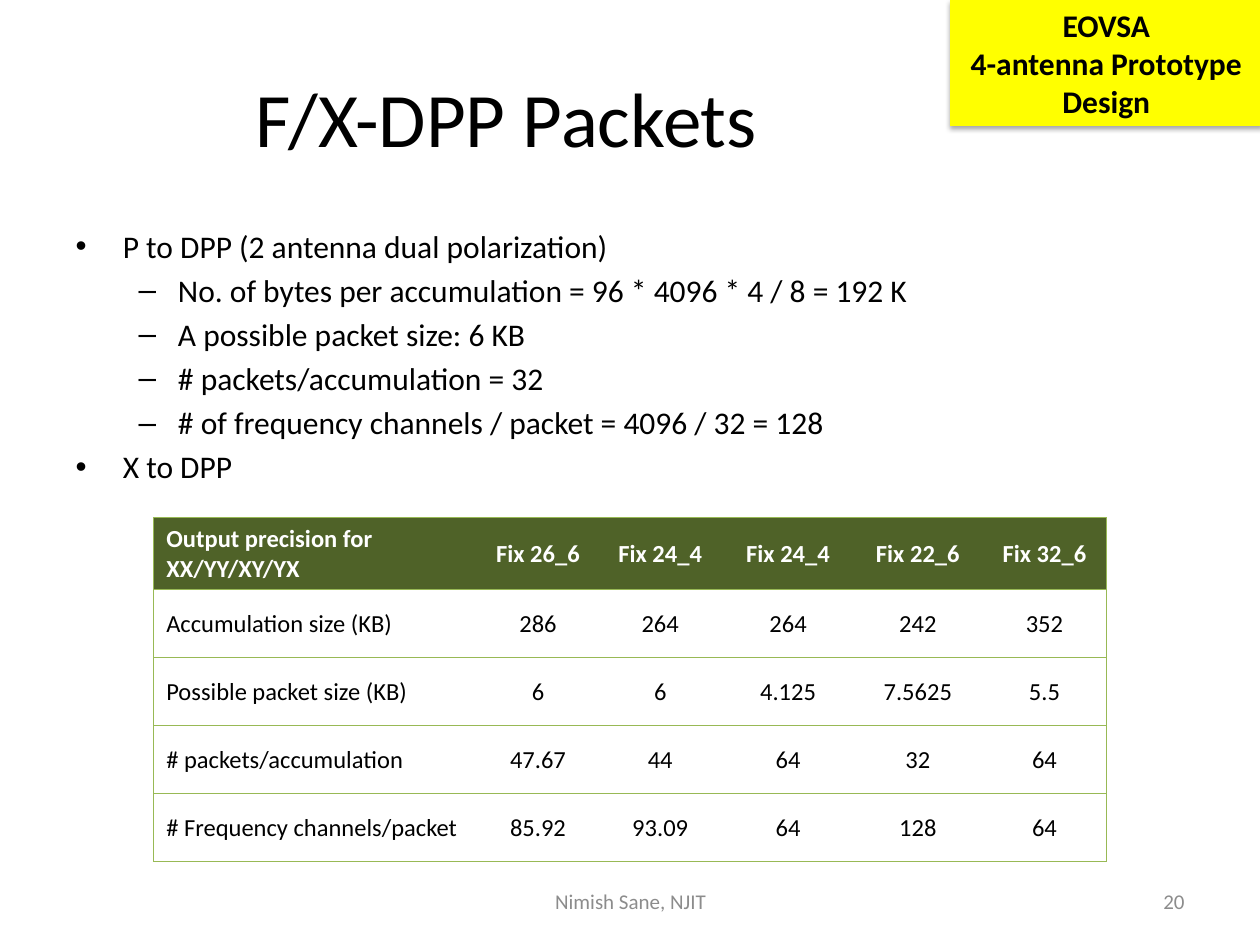
import pptx
import pptx.dml.color
import pptx.enum.shapes
import pptx.enum.text
import pptx.oxml
import pptx.oxml.ns
import pptx.util
import lxml.etree

Inches = pptx.util.Inches
Pt = pptx.util.Pt
Align = pptx.enum.text.PP_ALIGN
Anchor = pptx.enum.text.MSO_ANCHOR

COLORS = {
    "text": "000000",
    "muted": "8C8C8C",
    "white": "FFFFFF",
    "badge": "FFFF00",
    "header": "4F6228",
    "border": "98B955",
}


def rgb(name):
    return pptx.dml.color.RGBColor.from_string(COLORS[name])


def format_text(text_frame, size, color, alignment=None, bold=False):
    text_frame.word_wrap = True
    font_format = {"name": "Calibri", "size": Pt(size), "bold": bold}
    for paragraph in text_frame.paragraphs:
        paragraph.alignment = alignment
        for run in paragraph.runs:
            for attribute, value in font_format.items():
                setattr(run.font, attribute, value)
            run.font.color.rgb = rgb(color)


presentation = pptx.Presentation()
presentation.slide_width = Inches(10)
presentation.slide_height = Inches(7.5)
slide = presentation.slides.add_slide(presentation.slide_layouts[1])
title, body = slide.placeholders

title_position = {"left": 0.5, "top": 0.3, "width": 7.04, "height": 1.25}
body_position = {"left": 0.5, "top": 1.75, "width": 9, "height": 2.22}
for placeholder, position in ((title, title_position), (body, body_position)):
    for attribute, value in position.items():
        setattr(placeholder, attribute, Inches(value))
    placeholder.text_frame.auto_size = pptx.enum.text.MSO_AUTO_SIZE.NONE

title.text_frame.text = "F/X-DPP Packets"
format_text(title.text_frame, 44, "text", Align.CENTER)

bullets = [
    (0, "P to DPP (2 antenna dual polarization)"),
    (1, "No. of bytes per accumulation = 96 * 4096 * 4 / 8 = 192 K"),
    (1, "A possible packet size: 6 KB"),
    (1, "# packets/accumulation = 32"),
    (1, "# of frequency channels / packet = 4096 / 32 = 128"),
    (0, "X to DPP"),
]
body.text_frame.text = "\n".join(text for level, text in bullets)
for paragraph, (level, text) in zip(body.text_frame.paragraphs, bullets):
    paragraph.level = level
format_text(body.text_frame, 18, "text")

footers = [
    ("Nimish Sane, NJIT", 3.42, 3.17, Align.CENTER),
    ("20", 7.17, 2.33, Align.RIGHT),
]
for text, left, width, alignment in footers:
    footer = slide.shapes.add_textbox(Inches(left), Inches(6.95), Inches(width), Inches(0.4))
    footer.text_frame.text = text
    footer.text_frame.vertical_anchor = Anchor.MIDDLE
    format_text(footer.text_frame, 12, "muted", alignment)

badge = slide.shapes.add_shape(
    pptx.enum.shapes.MSO_SHAPE.RECTANGLE, Inches(7.54), 0, Inches(2.48), Inches(1)
)
badge.fill.solid()
badge.fill.fore_color.rgb = rgb("badge")
badge.line.fill.background()
badge.shadow.inherit = False
effects = badge.element.spPr.find(pptx.oxml.ns.qn("a:effectLst"))
effects.append(pptx.oxml.parse_xml(
    f'<a:outerShdw {pptx.oxml.ns.nsdecls("a")} blurRad="{Pt(3.1)}" dist="{Pt(1.8)}" '
    f'dir="5400000" rotWithShape="0"><a:srgbClr val="{COLORS["text"]}">'
    '<a:alpha val="35000"/></a:srgbClr></a:outerShdw>'
))
badge.text_frame.text = "EOVSA\n4-antenna Prototype Design"
badge.text_frame.vertical_anchor = Anchor.MIDDLE
format_text(badge.text_frame, 18, "text", Align.CENTER, True)

table_rows = [
    ["Output precision for XX/YY/XY/YX", "Fix 26_6", "Fix 24_4", "Fix 24_4", "Fix 22_6", "Fix 32_6"],
    ["Accumulation size (KB)", "286", "264", "264", "242", "352"],
    ["Possible packet size (KB)", "6", "6", "4.125", "7.5625", "5.5"],
    ["# packets/accumulation", "47.67", "44", "64", "32", "64"],
    ["# Frequency channels/packet", "85.92", "93.09", "64", "128", "64"],
]
column_widths = [2.58, 0.94, 1, 1.03, 1.03, 0.98]
row_heights = [0.57] + [0.54] * 4
table = slide.shapes.add_table(
    len(table_rows), len(column_widths), Inches(1.22), Inches(4.11),
    Inches(sum(column_widths)), Inches(sum(row_heights)),
).table
for column, width in zip(table.columns, column_widths):
    column.width = Inches(width)

last_column = len(column_widths) - 1
for row_index, (row, values) in enumerate(zip(table.rows, table_rows)):
    row.height = Inches(row_heights[row_index])
    is_header = row_index == 0
    for column_index, value in enumerate(values):
        cell = table.cell(row_index, column_index)
        cell.text = value
        cell.vertical_anchor = Anchor.MIDDLE
        format_text(
            cell.text_frame, 14, "white" if is_header else "text",
            Align.LEFT if column_index == 0 else Align.CENTER, is_header,
        )
        visible_sides = {
            "L": column_index == 0,
            "R": column_index == last_column,
            "T": True,
            "B": True,
        }
        properties = cell._tc.get_or_add_tcPr()
        for side, visible in visible_sides.items():
            line = lxml.etree.SubElement(properties, pptx.oxml.ns.qn(f"a:ln{side}"))
            line.set("w", str(Pt(0.75)))
            fill_tag = "a:solidFill" if visible else "a:noFill"
            line_fill = lxml.etree.SubElement(line, pptx.oxml.ns.qn(fill_tag))
            if visible:
                color = lxml.etree.SubElement(line_fill, pptx.oxml.ns.qn("a:srgbClr"))
                color.set("val", COLORS["border"])
        cell.fill.solid()
        cell.fill.fore_color.rgb = rgb("header" if is_header else "white")

presentation.save("out.pptx")
